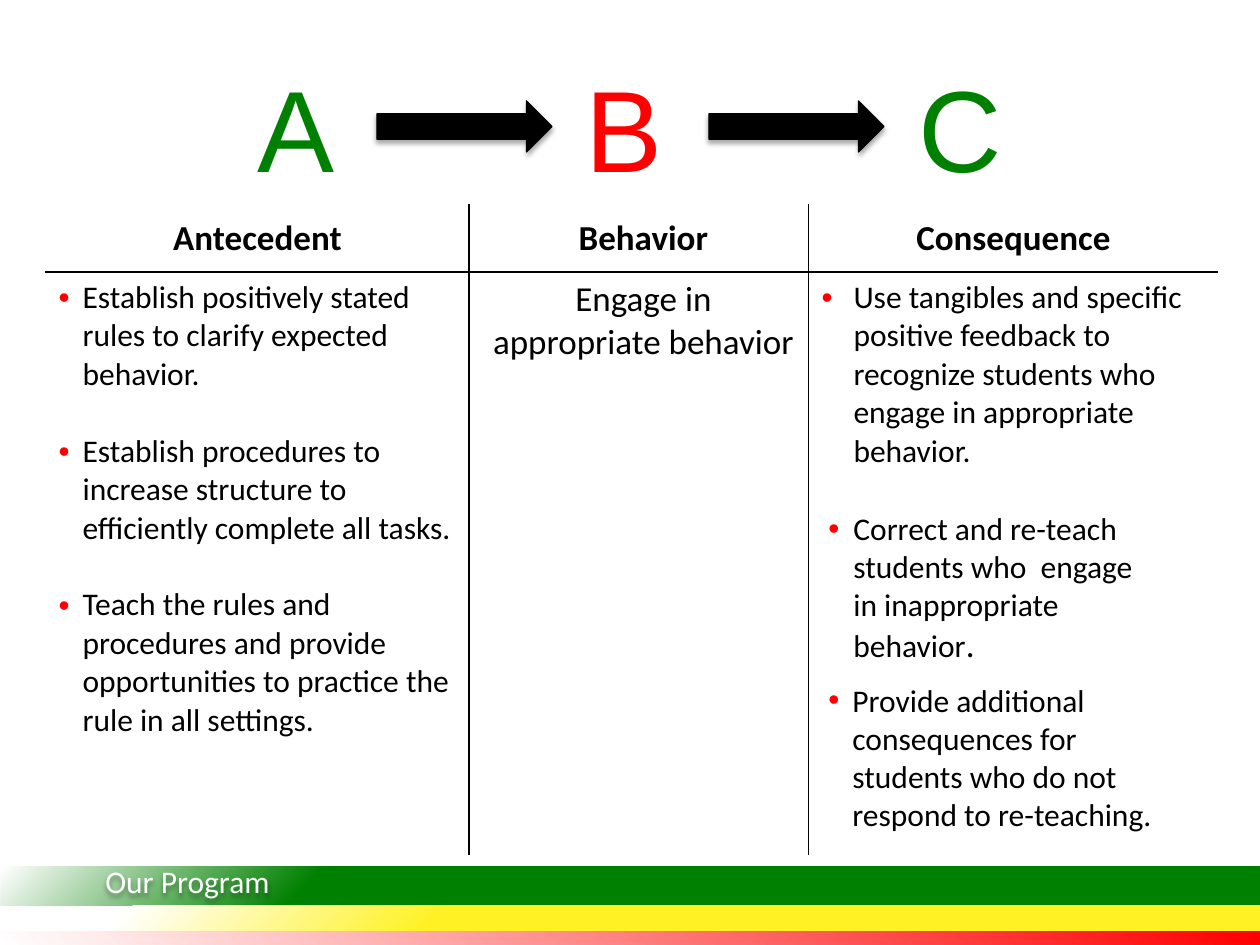
from pptx import Presentation
from pptx import util as u
from pptx.dml.color import RGBColor
from pptx.enum import shapes, text
from pptx.oxml import parse_xml
from pptx.oxml.ns import nsdecls, qn

EMU_PER_PX = 914400 / 126
GREEN, RED, YELLOW, BLACK, WHITE = "008000", "FF0000", "FFF123", "000000", "FFFFFF"


def px(value):
    return u.Emu(round(value * EMU_PER_PX))


def color(hex_value):
    return RGBColor.from_string(hex_value)


def set_all(target, values):
    for name, value in values.items():
        setattr(target, name, value)


def drawing(tag, body="", attributes=""):
    return parse_xml(f'<a:{tag} {nsdecls("a")} {attributes}>{body}</a:{tag}>')


def solid(hex_value):
    return f'<a:solidFill><a:srgbClr val="{hex_value}"/></a:solidFill>'


def add_soft_shadow(shape):
    shape._element.spPr.append(drawing(
        "effectLst", '<a:outerShdw blurRad="39370" dist="22860" dir="5400000">'
        '<a:srgbClr val="000000"><a:alpha val="35000"/></a:srgbClr></a:outerShdw>'))


class SlideBuilder:
    font = "Calibri"

    def __init__(self, presentation):
        self.slide = presentation.slides.add_slide(presentation.slide_layouts[5])

    def run(self, paragraph, words, size=18, hex_value=BLACK, bold=False, font=None):
        run = paragraph.add_run()
        run.text = words
        set_all(run.font, {"name": font or self.font, "size": u.Pt(size), "bold": bold})
        run.font.color.rgb = color(hex_value)

    def indent(self, paragraph, left, hanging=0):
        """Indent a paragraph; a hanging indent carries a red bullet."""
        properties = paragraph._p.get_or_add_pPr()
        properties.set("marL", str(px(left)))
        properties.set("indent", str(-px(hanging)))
        if hanging:
            properties.append(drawing("buClr", f'<a:srgbClr val="{RED}"/>'))
            properties.append(drawing("buFont", attributes='typeface="Arial"'))
            properties.append(drawing("buChar", attributes='char="•"'))

    def title(self, box, letters, centers):
        """Letters centred on tab stops."""
        title = self.slide.shapes.title
        set_all(title, dict(zip(("left", "top", "width", "height"), map(px, box))))
        title.text_frame.vertical_anchor = text.MSO_ANCHOR.MIDDLE
        paragraph = title.text_frame.paragraphs[0]
        paragraph.alignment = text.PP_ALIGN.LEFT
        start = px(box[0]) + title.text_frame.margin_left
        stops = "".join(f'<a:tab pos="{px(center) - start}" algn="ctr"/>' for center in centers)
        paragraph._p.get_or_add_pPr().append(drawing("tabLst", stops))
        for letter, hex_value in letters:
            self.run(paragraph, "\t" + letter, 66, hex_value, font="Arial")

    def band(self, top, height, stops, focus):
        shape = self.slide.shapes.add_shape(
            shapes.MSO_SHAPE.RECTANGLE, px(1), px(top), px(1259), px(height))
        shape.shadow.inherit = False
        shape.line.fill.background()
        shape.fill.solid()
        stop_xml = "".join(f'<a:gs pos="{position * 1000}"><a:srgbClr val="{hex_value}"/></a:gs>'
                           for position, hex_value in stops)
        rect = " ".join(f'{side}="{value * 1000}"' for side, value in zip("ltrb", focus))
        gradient = drawing("gradFill", f'<a:gsLst>{stop_xml}</a:gsLst>'
                           f'<a:path path="circle"><a:fillToRect {rect}/></a:path>')
        properties = shape._element.spPr
        properties.replace(properties.find(qn("a:solidFill")), gradient)

    def arrow(self, left, top, width, height):
        shape = self.slide.shapes.add_shape(
            shapes.MSO_SHAPE.RIGHT_ARROW, *map(px, (left, top, width, height)))
        shape.fill.solid()
        shape.fill.fore_color.rgb = color(BLACK)
        shape.line.color.rgb = color(BLACK)
        shape.line.width = u.Pt(0.75)
        add_soft_shadow(shape)

    def text_box(self, box, runs, hanging=0):
        shape = self.slide.shapes.add_textbox(*map(px, box))
        shape.text_frame.word_wrap = True
        paragraph = shape.text_frame.paragraphs[0]
        if hanging:
            self.indent(paragraph, hanging, hanging)
        for run in runs:
            self.run(paragraph, *run)
        return shape

    def table(self, box, widths, heights):
        table = self.slide.shapes.add_table(len(heights), len(widths), *map(px, box)).table
        set_all(table, {"first_row": False, "horz_banding": False})
        for column, width in zip(table.columns, widths):
            column.width = px(width)
        for row, height in zip(table.rows, heights):
            row.height = px(height)
        last_row, last_column = len(heights) - 1, len(widths) - 1
        for r, row in enumerate(table.rows):
            for c, cell in enumerate(row.cells):
                cell.fill.background()
                inner = {"lnL": c > 0, "lnR": c < last_column, "lnT": r > 0, "lnB": r < last_row}
                for order, (side, is_inner) in enumerate(inner.items()):
                    line = drawing(side, solid(BLACK if is_inner else WHITE), 'w="9525"')
                    cell._tc.get_or_add_tcPr().insert(order, line)
        return table

    def cell(self, cell, items, size=18, bold=False, left=0, hanging=0, centered=False):
        frame = cell.text_frame
        for number, words in enumerate(items):
            paragraph = frame.add_paragraph() if number else frame.paragraphs[0]
            if number:
                paragraph.space_before = u.Pt(22)
            if centered:
                paragraph.alignment = text.PP_ALIGN.CENTER
            self.indent(paragraph, left, hanging)
            self.run(paragraph, words, size, bold=bold)


def main():
    presentation = Presentation()
    set_all(presentation, {"slide_width": px(1260), "slide_height": px(945)})
    builder = SlideBuilder(presentation)

    # Heading letters and the arrows between them
    builder.title((63, 48, 1134, 157), [("A", GREEN), ("B", RED), ("C", GREEN)], (296, 624, 960))
    for left in (377, 709):
        builder.arrow(left, 101, 175, 51)

    # Three-column table
    table = builder.table((46, 205, 1172, 650), (423, 340, 409), (67, 584))
    for column, heading in enumerate(("Antecedent", "Behavior", "Consequence")):
        cell = table.cell(0, column)
        cell.vertical_anchor = text.MSO_ANCHOR.MIDDLE
        builder.cell(cell, [heading], 20, True, left=9 if column == 1 else 0, centered=True)
    builder.cell(table.cell(1, 0), [
        "Establish positively stated rules to clarify expected behavior.",
        "Establish procedures to increase structure to efficiently complete all tasks.",
        "Teach the rules and procedures and provide opportunities to practice the rule "
        "in all settings."], left=24, hanging=24)
    builder.cell(table.cell(1, 1), ["Engage in appropriate behavior"], 20, left=9, centered=True)
    builder.cell(table.cell(1, 2), [
        "Use tangibles and specific positive feedback to recognize students who engage "
        "in appropriate behavior."], left=32, hanging=32)

    # Further consequences
    builder.text_box((816, 503, 357, 208), [
        ("Correct and re-teach students who  engage in inappropriate behavior",), (".", 20)], 25)
    builder.text_box((816, 675, 357, 165), [
        ("Provide additional consequences for students who do not respond to re-teaching.",)], 24)

    # Footer bands and label
    builder.band(931, 15, [(0, RED), (100, WHITE)], (100, 0, 0, 100))
    builder.band(867, 39, [(75, GREEN), (100, WHITE)], (100, 100, 0, 0))
    builder.band(906, 25, [(65, YELLOW), (90, WHITE)], (100, 100, 0, 0))
    label = builder.text_box((93, 856, 242, 50), [("Our Program", 18, WHITE)])
    add_soft_shadow(label)

    presentation.save("out.pptx")


if __name__ == "__main__":
    main()
